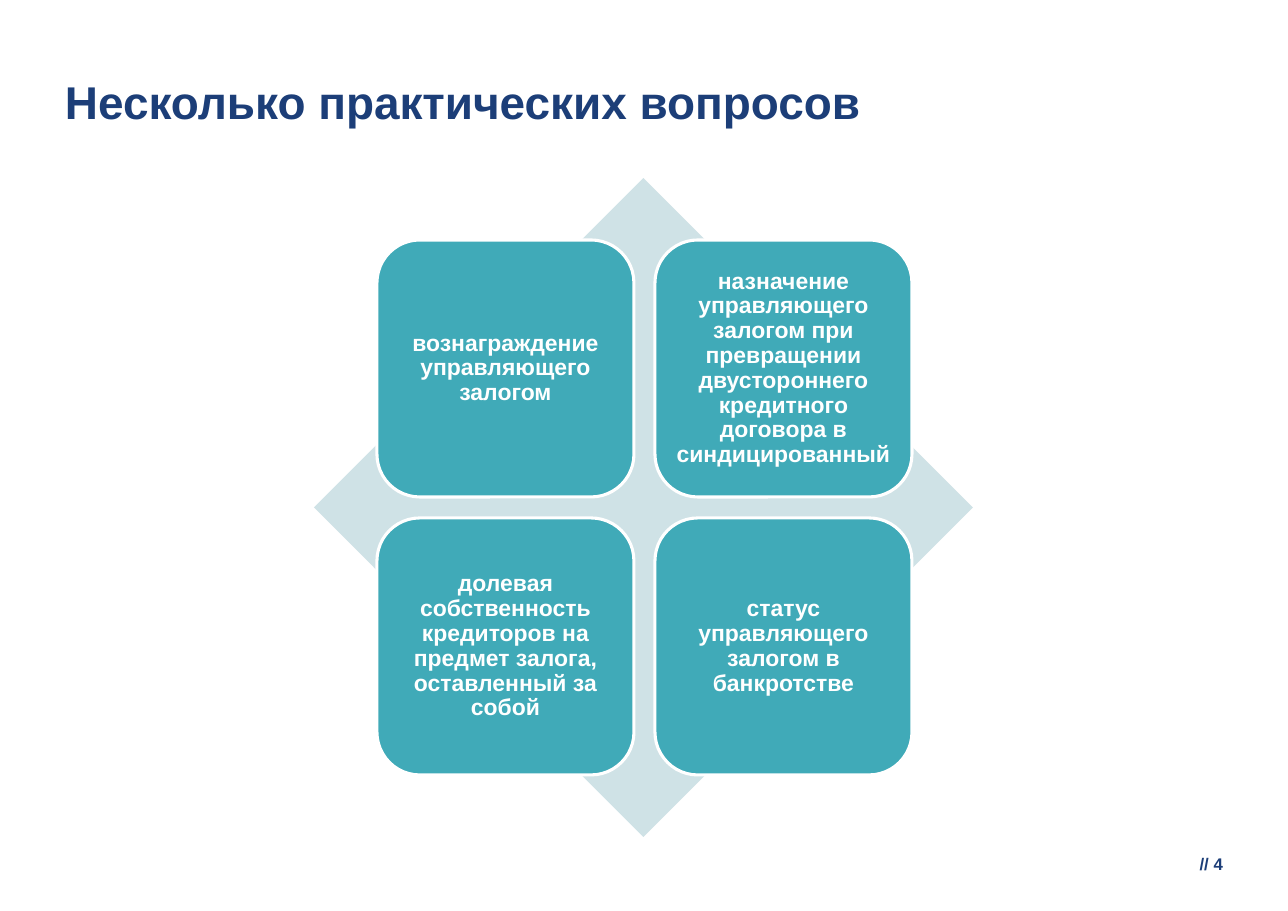
from pptx import Presentation
from pptx.dml.color import RGBColor
from pptx.enum.shapes import MSO_SHAPE
from pptx.enum.text import MSO_ANCHOR, PP_ALIGN
from pptx.util import Pt

DIAMOND, ROUNDED = MSO_SHAPE.DIAMOND, MSO_SHAPE.ROUNDED_RECTANGLE
MIDDLE = MSO_ANCHOR.MIDDLE
LEFT, CENTER, RIGHT = PP_ALIGN.LEFT, PP_ALIGN.CENTER, PP_ALIGN.RIGHT
NAVY, TEAL, PALE, WHITE = "1C3E78", "40AAB8", "CFE2E6", "FFFFFF"
EMU_PER_PX = 914400 / 110.2


def px(*lengths):
    return [round(length * EMU_PER_PX) for length in lengths]


def write(shape, text, size, color, align, inset=0):
    frame = shape.text_frame
    frame.word_wrap = True
    frame.vertical_anchor = MIDDLE
    margin = px(inset)[0]
    frame.margin_left = frame.margin_right = margin
    frame.margin_top = frame.margin_bottom = margin
    paragraph = frame.paragraphs[0]
    paragraph.alignment = align
    run = paragraph.add_run()
    run.text = text
    run.font.name = "Arial"
    run.font.size = Pt(size)
    run.font.bold = True
    run.font.color.rgb = RGBColor.from_string(color)
    return paragraph


prs = Presentation()
prs.slide_width, prs.slide_height = px(1288, 911)
slide = prs.slides.add_slide(prs.slide_layouts[5])
shapes = slide.shapes

heading = shapes.title
heading.left, heading.top, heading.width, heading.height = px(65, 36, 1158, 130)
write(heading, "Несколько практических вопросов", 30, NAVY, LEFT)

page_number = shapes.add_textbox(*px(1176, 849, 47, 29))
write(page_number, "// 4", 11, NAVY, RIGHT)

diamond = shapes.add_shape(DIAMOND, *px(314, 178, 659, 659))
diamond.shadow.inherit = False
diamond.fill.solid()
diamond.fill.fore_color.rgb = RGBColor.from_string(PALE)
diamond.line.fill.background()

questions = [
    "вознаграждение управляющего залогом",
    "назначение управляющего залогом при превращении двустороннего "
    "кредитного договора в синдицированный",
    "долевая собственность кредиторов на предмет залога, оставленный за собой",
    "статус управляющего залогом в банкротстве",
]
CARD_SIZE, CARD_STEP = 257, 278
for index, question in enumerate(questions):
    row, column = divmod(index, 2)
    card = shapes.add_shape(ROUNDED, *px(377 + column * CARD_STEP, 240 + row * CARD_STEP,
                                         CARD_SIZE, CARD_SIZE))
    card.shadow.inherit = False
    card.fill.solid()
    card.fill.fore_color.rgb = RGBColor.from_string(TEAL)
    card.line.color.rgb = RGBColor.from_string(WHITE)
    card.line.width = Pt(2)
    write(card, question, 15, WHITE, CENTER, inset=6).line_spacing = 0.9

prs.save("out.pptx")
